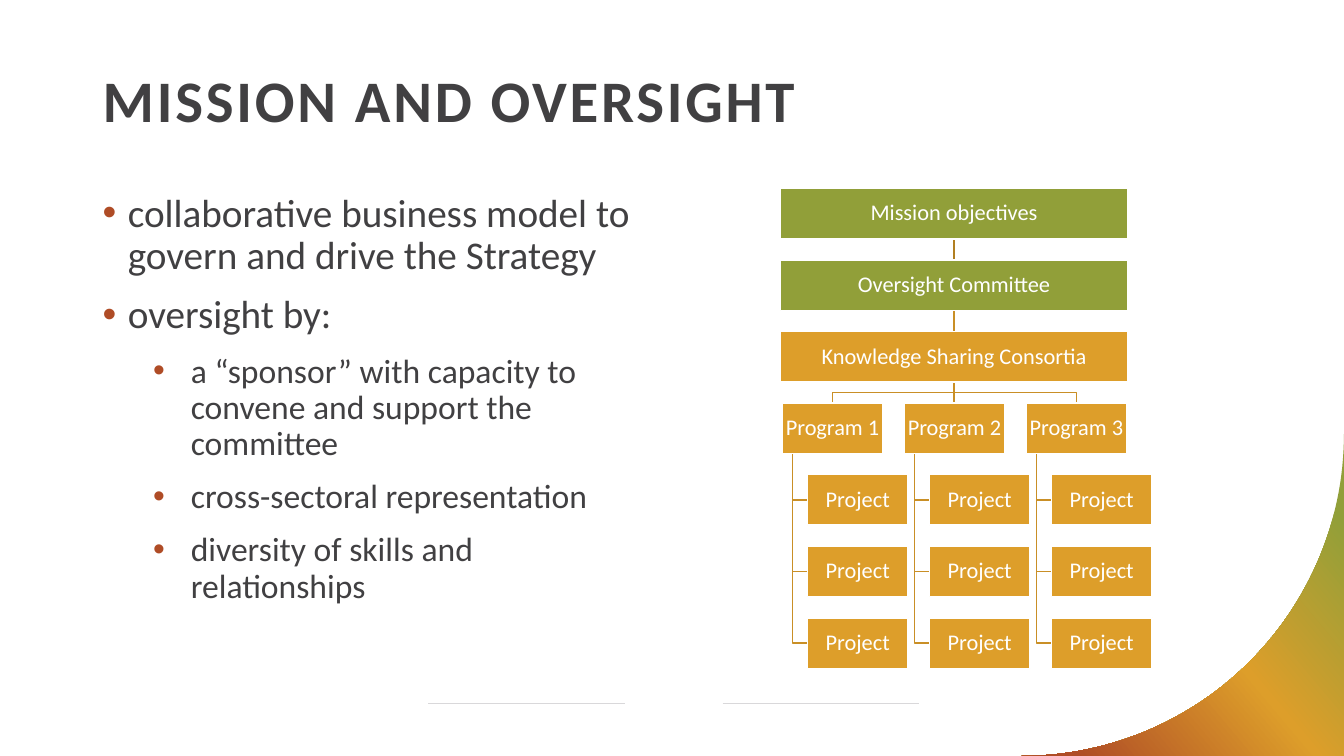
import math
from dataclasses import dataclass

from lxml import etree
from pptx import Presentation
from pptx.dml.color import RGBColor
from pptx.enum.shapes import MSO_CONNECTOR, MSO_SHAPE
from pptx.enum.text import MSO_ANCHOR, PP_ALIGN
from pptx.oxml.ns import qn
from pptx.util import Pt

STRAIGHT = MSO_CONNECTOR.STRAIGHT
RECT = MSO_SHAPE.RECTANGLE
TOP, MIDDLE = MSO_ANCHOR.TOP, MSO_ANCHOR.MIDDLE
LEFT, CENTER = PP_ALIGN.LEFT, PP_ALIGN.CENTER


@dataclass(frozen=True)
class Theme:
    font: str = "Calibri"
    text: str = "414042"
    white: str = "FFFFFF"
    green: str = "919F39"
    amber: str = "DD9E2A"
    rust: str = "AF4C26"
    link: str = "C98F26"
    top_link: str = "B17F22"
    rule: str = "D9D8DA"
    title_size: int = 42
    body_sizes: tuple = (28, 24)
    box_size: int = 16


THEME = Theme()

SLIDE_W, SLIDE_H = 960, 540
BODY_LEFT = 66.24
LEVEL_INDENTS = ((18, -18), (63, -27))  # left margin and first-line indent

# Organisation chart grid
ROW_TOP, ROW_PITCH, BOX_H = 134.64, 51.12, 36
HEAD_LEFT, HEAD_W = 557.28, 248.4
CENTRE_X = HEAD_LEFT + HEAD_W / 2
PROGRAM_LEFT, PROGRAM_PITCH, PROGRAM_W = 558.72, 87.12, 72
PROJECT_SHIFT, STEM_SHIFT = 18, 7.2

BULLETS = [
    (0, "collaborative business model to govern and drive the Strategy"),
    (0, "oversight by:"),
    (1, "a “sponsor” with capacity to convene and support the committee"),
    (1, "cross-sectoral representation"),
    (1, "diversity of skills and relationships"),
]
HEADS = [
    ("Mission objectives", THEME.green),
    ("Oversight Committee", THEME.green),
    ("Knowledge Sharing Consortia", THEME.amber),
]
PROGRAMS = ["Program 1", "Program 2", "Program 3"]
PROJECTS = ["Project"] * 3
PROGRAM_ROW = len(HEADS)


def rgb(value):
    return RGBColor.from_string(value)


def row_top(row):
    return ROW_TOP + row * ROW_PITCH


def row_bottom(row):
    return row_top(row) + BOX_H


def set_attributes(target, values):
    for name, value in values.items():
        setattr(target, name, value)


def add_run(p, text, size, color, bold=False):
    r = p.add_run()
    r.text = text
    set_attributes(r.font, {"name": THEME.font, "size": Pt(size), "bold": bold})
    r.font.color.rgb = rgb(color)
    return r


def add_text_box(slide, left, top, width, height):
    tf = slide.shapes.add_textbox(Pt(left), Pt(top), Pt(width), Pt(height)).text_frame
    set_attributes(tf, {"word_wrap": True, "vertical_anchor": TOP})
    return tf


def add_title(slide, text):
    p = add_text_box(slide, BODY_LEFT, 47.52, 828, 73.44).paragraphs[0]
    set_attributes(p, {"alignment": LEFT, "line_spacing": 0.9})
    r = add_run(p, text, THEME.title_size, THEME.text, bold=True)
    r.font._element.set("spc", "200")


def add_bullet(p, level):
    margin, indent = LEVEL_INDENTS[level]
    pPr = p._p.get_or_add_pPr()
    pPr.set("marL", str(Pt(margin)))
    pPr.set("indent", str(Pt(indent)))
    color = etree.SubElement(pPr, qn("a:buClr"))
    etree.SubElement(color, qn("a:srgbClr"), val=THEME.rust)
    etree.SubElement(pPr, qn("a:buFont"), typeface="Arial")
    etree.SubElement(pPr, qn("a:buChar"), char="•")


def add_bullet_list(slide, items):
    tf = add_text_box(slide, BODY_LEFT, ROW_TOP, 408.24, 342.72)
    for i, (level, text) in enumerate(items):
        p = tf.add_paragraph() if i else tf.paragraphs[0]
        add_bullet(p, level)
        set_attributes(p, {"level": level, "line_spacing": 0.9, "space_after": Pt(12)})
        add_run(p, text, THEME.body_sizes[level], THEME.text)


def add_box(slide, text, left, row, width, fill):
    sp = slide.shapes.add_shape(RECT, Pt(left), Pt(row_top(row)), Pt(width), Pt(BOX_H))
    sp.shadow.inherit = False
    sp.fill.solid()
    sp.fill.fore_color.rgb = rgb(fill)
    sp.line.color.rgb = rgb(THEME.white)
    sp.line.width = Pt(1)
    tf = sp.text_frame
    set_attributes(tf, {"word_wrap": True, "vertical_anchor": MIDDLE})
    for side in ("left", "right", "top", "bottom"):
        setattr(tf, f"margin_{side}", Pt(0.8))
    p = tf.paragraphs[0]
    set_attributes(p, {"alignment": CENTER, "line_spacing": 0.9})
    add_run(p, text, THEME.box_size, THEME.white)


def add_line(slide, x1, y1, x2, y2, color, width):
    line = slide.shapes.add_connector(STRAIGHT, Pt(x1), Pt(y1), Pt(x2), Pt(y2))
    line.line.color.rgb = rgb(color)
    line.line.width = Pt(width)
    etree.SubElement(line._element.spPr, qn("a:effectLst"))


def add_outline(slide, points, close):
    start, *rest = [(Pt(x), Pt(y)) for x, y in points]
    builder = slide.shapes.build_freeform(*start, scale=1.0)
    builder.add_line_segments(rest, close=close)
    sp = builder.convert_to_shape()
    sp.shadow.inherit = False
    return sp


def add_elbow(slide, points):
    sp = add_outline(slide, points, close=False)
    sp.fill.background()
    sp.line.color.rgb = rgb(THEME.link)
    sp.line.width = Pt(1)


def add_corner(slide, radius=230, steps=60):
    """Fill the area between a quarter circle and the bottom right corner."""
    cx, cy = SLIDE_W - radius, SLIDE_H - radius
    angles = [math.pi / 2 * i / steps for i in range(steps + 1)]
    arc = [(cx + radius * math.cos(a), cy + radius * math.sin(a)) for a in angles]
    sp = add_outline(slide, [(SLIDE_W, SLIDE_H), *arc], close=True)
    sp.line.fill.background()
    sp.fill.gradient()
    grad = sp._element.spPr.find(qn("a:gradFill"))
    for child in list(grad):
        grad.remove(child)
    stops = etree.SubElement(grad, qn("a:gsLst"))
    for percent, color in ((12, THEME.green), (50, THEME.amber), (91, THEME.rust)):
        stop = etree.SubElement(stops, qn("a:gs"), pos=str(percent * 1000))
        etree.SubElement(stop, qn("a:srgbClr"), val=color)
    etree.SubElement(grad, qn("a:lin"), ang=str(140 * 60000), scaled="0")


def add_program(slide, column, name):
    """Draw one program with its projects and the links that lead to them."""
    left = PROGRAM_LEFT + column * PROGRAM_PITCH
    centre, stem, project_left = left + PROGRAM_W / 2, left + STEM_SHIFT, left + PROJECT_SHIFT
    start, end = row_bottom(PROGRAM_ROW - 1), row_top(PROGRAM_ROW)
    if column == len(PROGRAMS) // 2:
        add_line(slide, CENTRE_X, start, CENTRE_X, end, THEME.link, 1)
    else:
        bend = (start + end) / 2
        add_elbow(slide, [(CENTRE_X, start), (CENTRE_X, bend), (centre, bend), (centre, end)])
    for row, project in enumerate(PROJECTS, PROGRAM_ROW + 1):
        middle = row_top(row) + BOX_H / 2
        add_elbow(slide, [(stem, row_bottom(PROGRAM_ROW)), (stem, middle), (project_left, middle)])
        add_box(slide, project, project_left, row, PROGRAM_W, THEME.amber)
    add_box(slide, name, left, PROGRAM_ROW, PROGRAM_W, THEME.amber)


def add_org_chart(slide):
    for row, color in enumerate((THEME.top_link, THEME.link)):
        add_line(slide, CENTRE_X, row_bottom(row), CENTRE_X, row_top(row + 1), color, 1)
    for column, name in enumerate(PROGRAMS):
        add_program(slide, column, name)
    for row, (text, fill) in enumerate(HEADS):
        add_box(slide, text, HEAD_LEFT, row, HEAD_W, fill)


def main():
    prs = Presentation()
    prs.slide_width, prs.slide_height = Pt(SLIDE_W), Pt(SLIDE_H)
    slide = prs.slides.add_slide(prs.slide_layouts[6])
    for left in (306, 516.24):
        add_line(slide, left, 502.4, left + 140.4, 502.4, THEME.rule, 0.5)
    add_corner(slide)
    add_bullet_list(slide, BULLETS)
    add_title(slide, "MISSION AND OVERSIGHT")
    add_org_chart(slide)
    prs.save("out.pptx")


if __name__ == "__main__":
    main()
